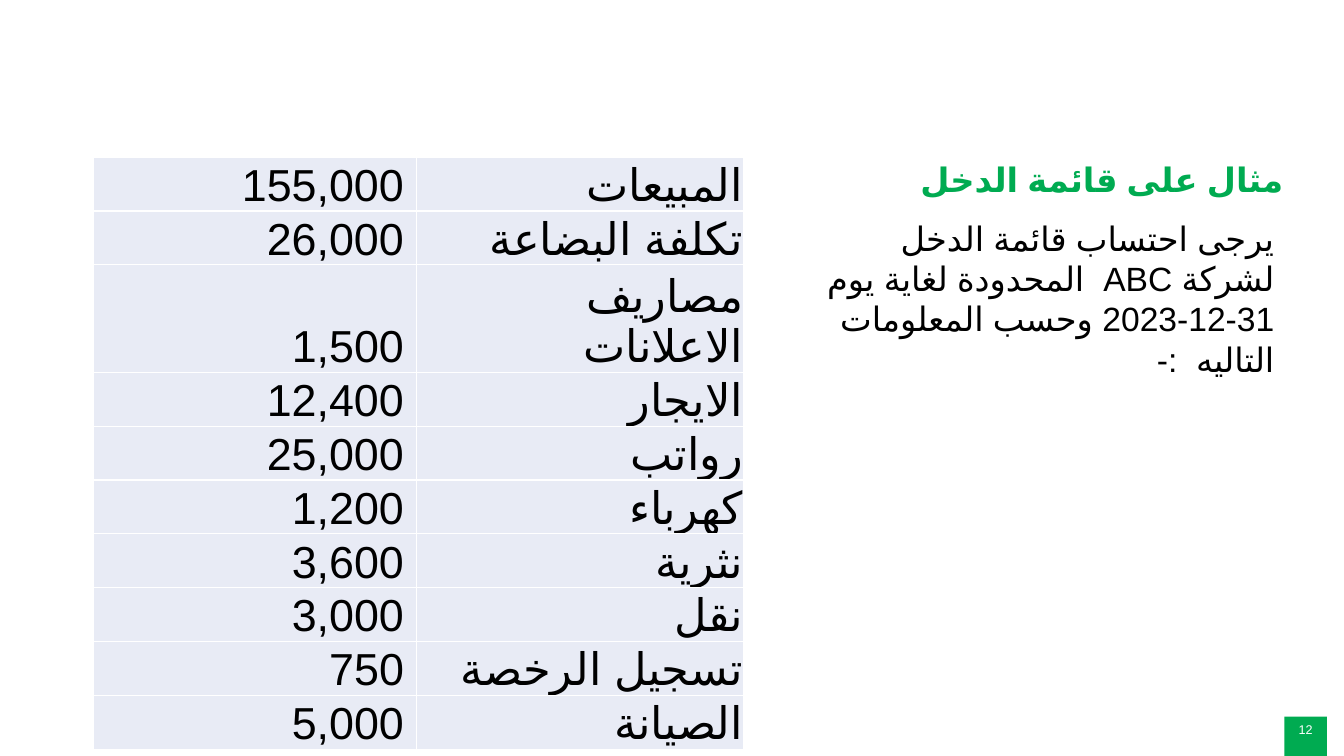
from dataclasses import dataclass
from typing import NamedTuple

from lxml import etree
from pptx import Presentation, util as u
from pptx.dml.color import RGBColor
from pptx.enum import lang, shapes, text
from pptx.oxml import ns


@dataclass(frozen=True)
class Theme:
    font: str = "Arial"
    green: str = "00AB51"
    cell: str = "E8EBF5"
    white: str = "FFFFFF"
    black: str = "000000"
    heading: int = 24
    figure: int = 32
    number: int = 9


class Area(NamedTuple):
    """Place on a grid of 100 columns by 100 rows."""
    left: float
    top: float
    width: float
    height: float


class Entry(NamedTuple):
    label: str
    amount: int
    height: float = 6.8


THEME = Theme()
WIDTH, HEIGHT = u.Inches(13.33), u.Inches(7.5)
TITLE = Area(3.68, 18.67, 92.57, 8.4)
TASK = Area(59.79, 28.13, 35.78, 17.47)
BADGE = Area(95.57, 94.8, 3.15, 5.2)
TABLE_LEFT, TABLE_TOP = 6.98, 20.8
TABLE_COLS = (24.01, 24.31)
ENTRIES = [
    Entry("المبيعات ", 155000),
    Entry("تكلفة البضاعة", 26000),
    Entry("مصاريف الاعلانات ", 1500, 6.13),
    Entry("الايجار", 12400),
    Entry("رواتب", 25000),
    Entry("كهرباء", 1200),
    Entry("نثرية", 3600),
    Entry("نقل", 3000),
    Entry("تسجيل الرخصة ", 750),
    Entry("الصيانة ", 5000),
]


def col(n: float) -> int:
    return round(WIDTH * n / 100)


def row(n: float) -> int:
    return round(HEIGHT * n / 100)


def box(area: Area) -> tuple[int, int, int, int]:
    return col(area.left), row(area.top), col(area.width), row(area.height)


def place(sp, area: Area) -> None:
    sp.left, sp.top, sp.width, sp.height = box(area)


def write(tf, words: str, *, size: int, color: str = THEME.black,
          bold: bool = False, align=text.PP_ALIGN.RIGHT,
          rtl: bool = False, spacing: float = 1.0) -> None:
    p = tf.paragraphs[0]
    p.alignment, p.line_spacing, p.space_before = align, spacing, u.Pt(0)
    pPr = p._p.get_or_add_pPr()
    pPr.set("marL", "0")
    pPr.set("indent", "0")
    pPr.set("rtl", str(int(rtl)))
    etree.SubElement(pPr, ns.qn("a:buNone"))
    r = p.add_run()
    r.text = words
    r.font.name, r.font.size, r.font.bold = THEME.font, u.Pt(size), bold
    r.font.color.rgb = RGBColor.from_string(color)
    ids = lang.MSO_LANGUAGE_ID
    r.font.language_id = ids.ARABIC_JORDAN if rtl else ids.ENGLISH_US
    etree.SubElement(r._r.get_or_add_rPr(), ns.qn("a:cs"), typeface=THEME.font)


def style_cell(cell) -> None:
    tcPr = cell._tc.get_or_add_tcPr()
    for side in ("lnL", "lnR", "lnT", "lnB"):
        ln = etree.SubElement(tcPr, ns.qn(f"a:{side}"), w=str(u.Pt(1)))
        fill = etree.SubElement(ln, ns.qn("a:solidFill"))
        etree.SubElement(fill, ns.qn("a:srgbClr"), val=THEME.white)
    cell.fill.solid()
    cell.fill.fore_color.rgb = RGBColor.from_string(THEME.cell)
    cell.margin_left = cell.margin_right = 0
    cell.margin_top = cell.margin_bottom = 0
    cell.vertical_anchor = text.MSO_ANCHOR.BOTTOM


def add_title(s) -> None:
    sp = s.shapes.title
    place(sp, TITLE)
    tf = sp.text_frame
    tf.vertical_anchor = text.MSO_ANCHOR.BOTTOM
    tf.auto_size = text.MSO_AUTO_SIZE.NONE
    write(tf, "مثال على قائمة الدخل ", size=THEME.heading,
          color=THEME.green, bold=True, rtl=True, spacing=0.9)


def add_task(s) -> None:
    sp = s.placeholders[1]
    place(sp, TASK)
    tf = sp.text_frame
    tf.vertical_anchor = text.MSO_ANCHOR.TOP
    tf.auto_size = text.MSO_AUTO_SIZE.SHAPE_TO_FIT_TEXT
    write(tf, "يرجى احتساب قائمة الدخل لشركة ABC  المحدودة لغاية يوم "
          "31-12-2023 وحسب المعلومات التاليه  :-",
          size=THEME.heading, rtl=True)


def add_badge(s) -> None:
    sp = s.shapes.add_shape(shapes.MSO_SHAPE.RECTANGLE, *box(BADGE))
    sp.shadow.inherit = False
    sp.fill.solid()
    sp.fill.fore_color.rgb = RGBColor.from_string(THEME.green)
    sp.line.fill.background()
    sp.text_frame.vertical_anchor = text.MSO_ANCHOR.TOP
    write(sp.text_frame, "12", size=THEME.number, color=THEME.white,
          align=text.PP_ALIGN.CENTER)


def add_accounts(s) -> None:
    area = Area(TABLE_LEFT, TABLE_TOP, sum(TABLE_COLS),
                sum(e.height for e in ENTRIES))
    table = s.shapes.add_table(len(ENTRIES), len(TABLE_COLS), *box(area)).table
    table.first_row = table.horz_banding = False
    for column, width in zip(table.columns, TABLE_COLS):
        column.width = col(width)
    for i, entry in enumerate(ENTRIES):
        table.rows[i].height = row(entry.height)
        for j, words in enumerate((f"{entry.amount:,} ", entry.label)):
            cell = table.cell(i, j)
            style_cell(cell)
            write(cell.text_frame, words, size=THEME.figure, rtl=j == 1)


def main() -> None:
    prs = Presentation()
    prs.slide_width, prs.slide_height = WIDTH, HEIGHT
    s = prs.slides.add_slide(prs.slide_layouts[1])
    # Heading and task
    add_title(s)
    add_task(s)
    # Page number
    add_badge(s)
    # Income and expense accounts
    add_accounts(s)
    prs.save("out.pptx")


if __name__ == "__main__":
    main()
